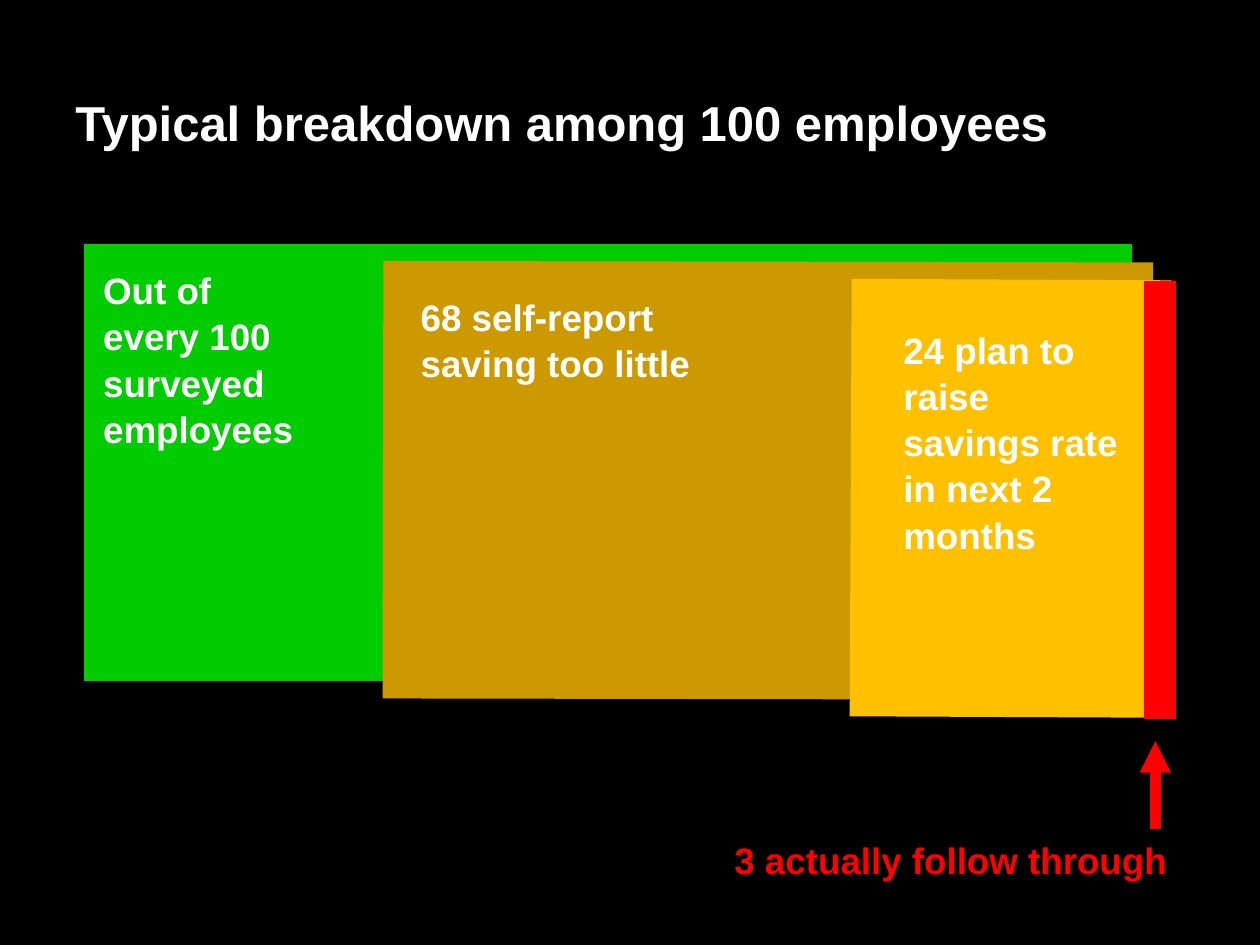
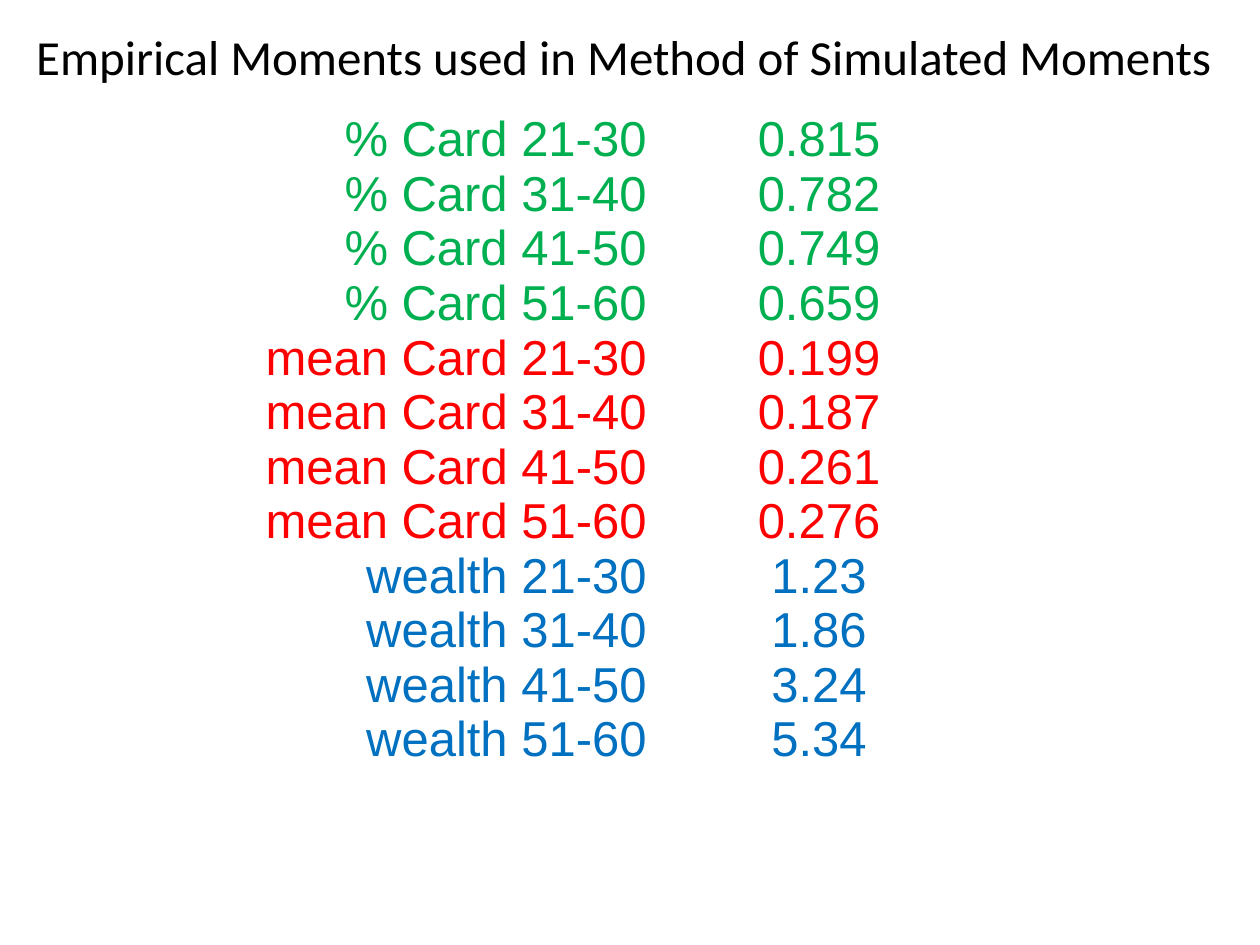
from lxml.etree import SubElement
from pptx import Presentation
from pptx.dml.color import RGBColor
from pptx.enum.shapes import MSO_CONNECTOR
from pptx.enum.text import MSO_ANCHOR, PP_ALIGN
from pptx.oxml.ns import qn
from pptx.util import Cm, Pt

COLORS = {
    "black": "000000", "white": "FFFFFF", "red": "FF0000",
    "lime": "00CC00", "ochre": "CC9900", "amber": "FFC000",
    "green": "00B050", "blue": "0070C0",
}


def write(tf, text, size=28, color="white", font="Arial", bold=False,
          align=PP_ALIGN.LEFT, spacing=1.0, wrap=True, anchor=MSO_ANCHOR.TOP):
    """Fill a text frame with one formatted paragraph."""
    tf.word_wrap = wrap
    tf.vertical_anchor = anchor
    p = tf.paragraphs[0]
    p.alignment = align
    p.line_spacing = spacing
    r = p.add_run()
    r.text = text
    r.font.name = font
    r.font.size = Pt(size)
    r.font.bold = bold
    r.font.color.rgb = RGBColor.from_string(COLORS[color])


def add_line(s, x1, y1, x2, y2, color, width, arrow=False):
    line = s.shapes.add_connector(MSO_CONNECTOR.STRAIGHT, Cm(x1), Cm(y1), Cm(x2), Cm(y2))
    line.line.color.rgb = RGBColor.from_string(COLORS[color])
    line.line.width = Pt(width)
    if arrow:
        SubElement(line.line._get_or_add_ln(), qn("a:tailEnd"), type="triangle")
    SubElement(line._element.spPr, qn("a:effectLst"))


prs = Presentation()
prs.slide_width, prs.slide_height = Cm(25.4), Cm(19.05)
slides = []
for background in ("black", "white"):
    s = prs.slides.add_slide(prs.slide_layouts[6])
    s.background.fill.solid()
    s.background.fill.fore_color.rgb = RGBColor.from_string(COLORS[background])
    slides.append(s)
breakdown, moments = slides

# Slide 1: nested bars, each drawn as one very thick line
BAR = 250
title = breakdown.shapes.add_textbox(Cm(1.27), Cm(0.56), Cm(22.86), Cm(2.62))
write(title.text_frame, "Typical breakdown among 100 employees", bold=True,
      anchor=MSO_ANCHOR.BOTTOM)

for x1, y1, x2, y2, color in [
    (1.7, 9.32, 22.83, 9.32, "lime"),
    (7.72, 9.67, 23.24, 9.7, "ochre"),
    (17.15, 10.03, 23.6, 10.06, "amber"),
]:
    add_line(breakdown, x1, y1, x2, y2, color, BAR)

for x, y, w, h, text, color, align in [
    (1.83, 5.23, 4.52, 3.81, "Out of every 100 surveyed employees", "white", PP_ALIGN.LEFT),
    (8.23, 5.77, 7.11, 2.03, "68 self-report saving too little", "white", PP_ALIGN.LEFT),
    (17.96, 6.43, 5.18, 4.7, "24 plan to raise savings rate in next 2 months", "white",
     PP_ALIGN.LEFT),
    (11.84, 16.71, 11.94, 1.14, "3 actually follow through", "red", PP_ALIGN.RIGHT),
]:
    label = breakdown.shapes.add_textbox(Cm(x), Cm(y), Cm(w), Cm(h))
    write(label.text_frame, text, size=21, color=color, bold=True, align=align, spacing=1.05)

add_line(breakdown, 23.06, 10.08, 23.7, 10.08, "red", BAR)
add_line(breakdown, 23.29, 16.71, 23.29, 14.94, "red", 6, arrow=True)

# Slide 2: moments by age group
AGES = ["21-30", "31-40", "41-50", "51-60"]
GROUPS = [
    ("% Card", "green", ["0.815", "0.782", "0.749", "0.659"]),
    ("mean Card", "red", ["0.199", "0.187", "0.261", "0.276"]),
    ("wealth", "blue", ["1.23", "1.86", "3.24", "5.34"]),
]
ROW = 1.1
rows = [(f"{name} {age}", value, color)
        for name, color, values in GROUPS for age, value in zip(AGES, values)]

table = moments.shapes.add_table(len(rows), 3, Cm(2.74), Cm(2.29), Cm(17.25),
                                 Cm(ROW * len(rows))).table
table.first_row = table.horz_banding = False
for column, width in zip(table.columns, (1.6, 8.69, 6.96)):
    column.width = Cm(width)
for i, (name, value, color) in enumerate(rows):
    table.rows[i].height = Cm(ROW)
    for j in range(3):
        cell = table.cell(i, j)
        cell.fill.background()
        cell.margin_left = cell.margin_right = cell.margin_top = cell.margin_bottom = 0
        cell.vertical_anchor = MSO_ANCHOR.MIDDLE
    for j, text, align in [(1, name, PP_ALIGN.RIGHT), (2, value, PP_ALIGN.CENTER)]:
        write(table.cell(i, j).text_frame, text, color=color, align=align, spacing=0.97,
              anchor=None)

title = moments.shapes.add_textbox(Cm(0.48), Cm(0.41), Cm(24.49), Cm(1.45))
write(title.text_frame, "Empirical Moments used in Method of Simulated Moments",
      color="black", font="Calibri", wrap=False)

prs.save("out.pptx")
